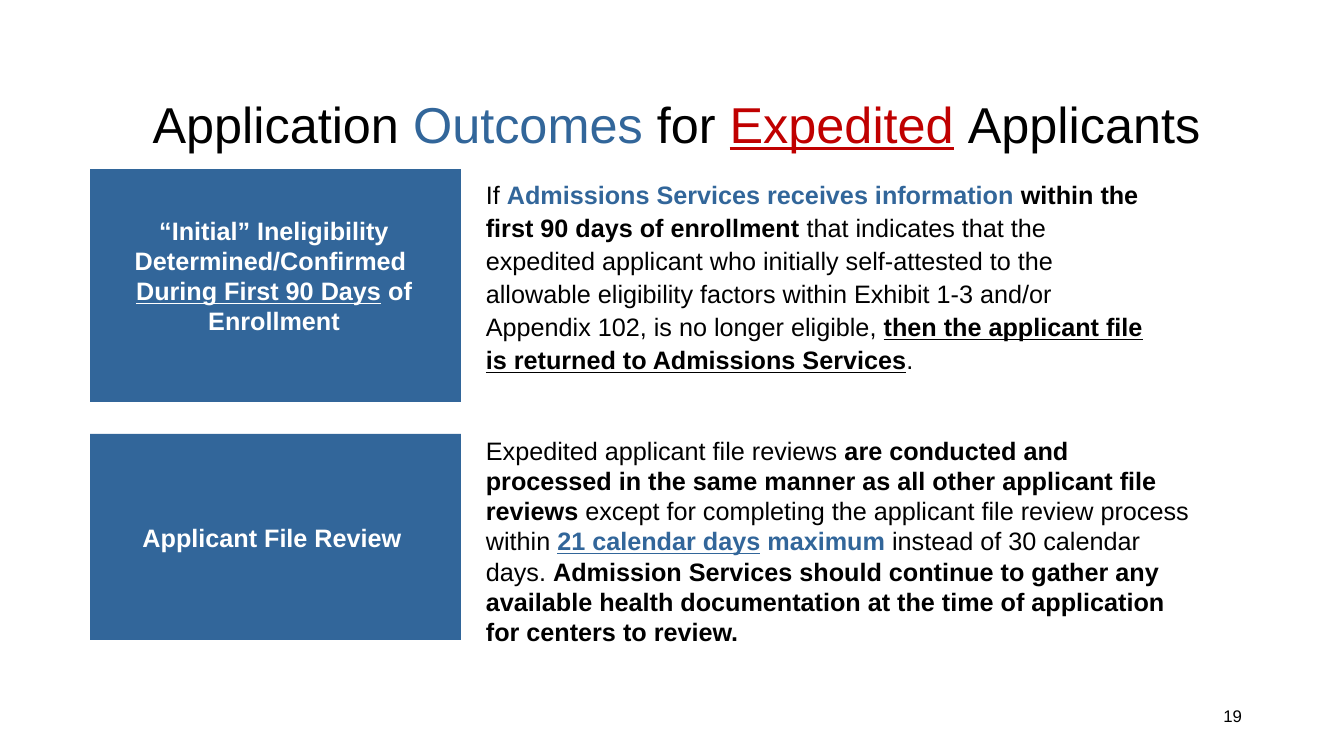
"""Build the slide on application outcomes for expedited applicants."""
from pptx import Presentation
from pptx.dml.color import RGBColor
from pptx.enum.shapes import MSO_SHAPE as Shape
from pptx.enum.text import MSO_ANCHOR as Anchor, PP_ALIGN as Align
from pptx.util import Pt

PX = 914400 / 100.8
THEME = {
    "font": "Arial",
    "black": RGBColor(0x00, 0x00, 0x00),
    "white": RGBColor(0xFF, 0xFF, 0xFF),
    "blue": RGBColor(0x32, 0x66, 0x9A),
    "red": RGBColor(0xC0, 0x00, 0x00),
    "title": Pt(36),
    "body": Pt(18),
    "number": Pt(12),
}


def emu(*lengths):
    return [round(length * PX) for length in lengths]


def add_text(box, paragraphs, size, align=Align.LEFT, line_spacing=None, space_before=None):
    frame = slide.shapes.add_textbox(*emu(*box)).text_frame
    frame.word_wrap = True
    frame.vertical_anchor = Anchor.TOP
    for index, runs in enumerate(paragraphs):
        paragraph = frame.add_paragraph() if index else frame.paragraphs[0]
        paragraph.alignment = align
        paragraph.line_spacing = line_spacing
        paragraph.space_before = space_before
        for text, color, style in runs:
            run = paragraph.add_run()
            run.text = text
            run.font.name = THEME["font"]
            run.font.size = THEME[size]
            run.font.color.rgb = THEME[color]
            run.font.bold = "b" in style
            run.font.underline = "u" in style


deck = Presentation()
deck.slide_width, deck.slide_height = emu(1344, 756)
slide = deck.slides.add_slide(deck.slide_layouts[6])

for top, height in ((169, 233), (434, 206)):
    panel = slide.shapes.add_shape(Shape.RECTANGLE, *emu(90, top, 371, height))
    panel.shadow.inherit = False
    panel.fill.solid()
    panel.fill.fore_color.rgb = THEME["blue"]
    panel.line.fill.background()

add_text((89, 210, 370, 155), [
    [("“Initial” Ineligibility Determined/Confirmed ", "white", "b")],
    [("During First 90 Days", "white", "bu"), (" of Enrollment", "white", "b")],
], "body", Align.CENTER)

add_text((87, 517, 370, 40), [[("Applicant File Review", "white", "b")]], "body", Align.CENTER)

add_text((87, 88, 1179, 72), [[
    ("Application ", "black", ""),
    ("Outcomes", "blue", ""),
    (" for ", "black", ""),
    ("Expedited", "red", "u"),
    (" ", "blue", ""),
    ("Applicants", "black", ""),
]], "title", Align.CENTER)

add_text((950, 701, 302, 40), [[("19", "black", "")]], "number", Align.RIGHT)

add_text((476, 172, 679, 208), [[
    ("If ", "black", ""),
    ("Admissions Services receives information ", "blue", "b"),
    ("within the first 90 days of enrollment ", "black", "b"),
    ("that indicates that the expedited applicant who initially self-attested to the "
     "allowable eligibility factors within Exhibit 1-3 and/or Appendix 102, "
     "is no longer eligible, ", "black", ""),
    ("then the applicant file is returned to Admissions Services", "black", "bu"),
    (".", "black", ""),
]], "body", line_spacing=1.09, space_before=Pt(6))

add_text((476, 430, 735, 224), [[
    ("Expedited applicant file reviews ", "black", ""),
    ("are conducted and processed in the same manner as all other applicant file reviews ",
     "black", "b"),
    ("except for completing the applicant file review process within ", "black", ""),
    ("21 calendar days", "blue", "bu"),
    (" maximum ", "blue", "b"),
    ("instead of 30 calendar days. ", "black", ""),
    ("Admission Services should continue to gather any available health documentation "
     "at the time of application for centers to review.", "black", "b"),
]], "body")

deck.save("out.pptx")
